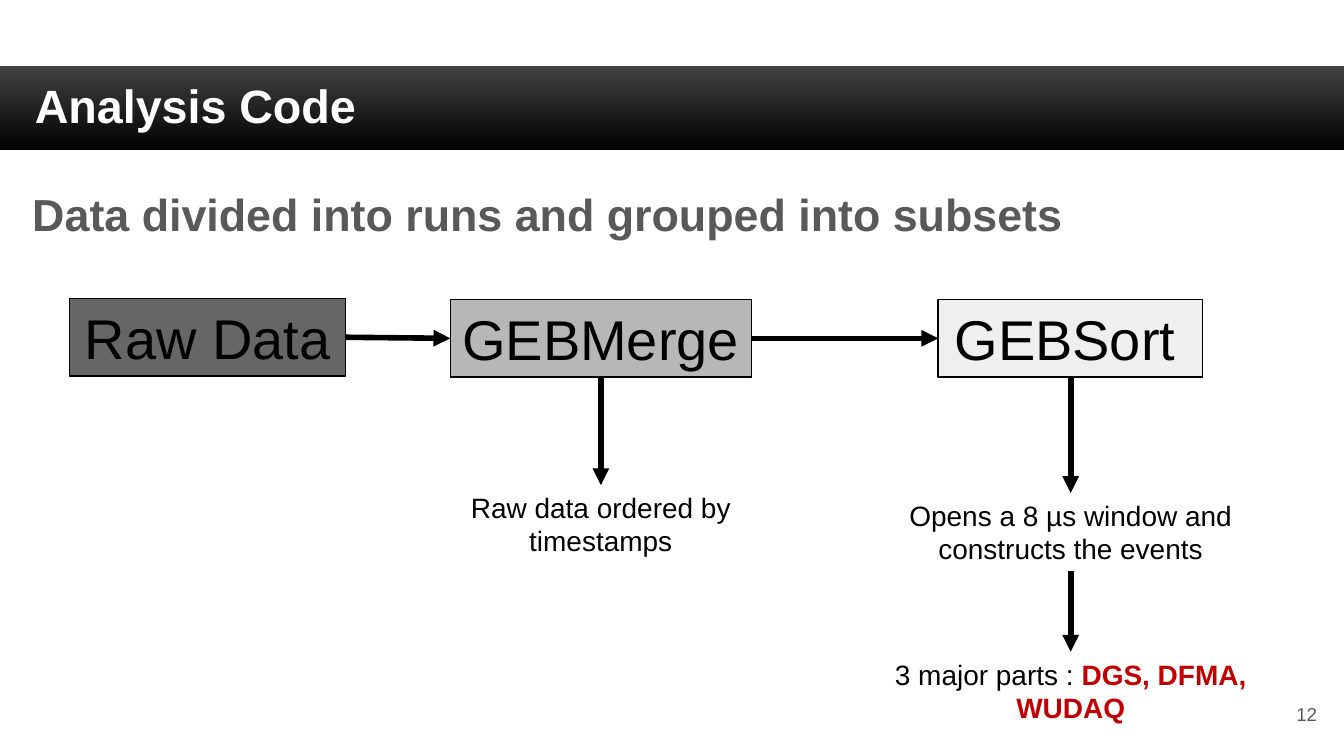
from lxml import etree
from pptx import Presentation
from pptx import util as u
from pptx.dml.color import RGBColor
from pptx.enum import shapes, text
from pptx.oxml import ns

HUE = {
    "ink": "000000", "white": "FFFFFF", "gray": "595959", "red": "C00000",
    "raw": "666666", "merge": "B7B7B7", "sort": "EFEFEF",
    "top": "424242", "base": "010101",
}
LEFT, MID, RIGHT = text.PP_ALIGN.LEFT, text.PP_ALIGN.CENTER, text.PP_ALIGN.RIGHT
ROW = 1.47  # height of stage boxes and captions


def tint(name):
    return RGBColor.from_string(HUE[name])


def write(shape, *runs, size=15, hue="ink", bold=False, align=MID,
          pad=(0.18, 0.1, 0.18, 0.1), mid=False, lead=None, after=None):
    """Fill a shape with one paragraph; a run is text or (text, hue, bold)."""
    frame = shape.text_frame
    frame.word_wrap = True
    frame.vertical_anchor = text.MSO_ANCHOR.MIDDLE if mid else text.MSO_ANCHOR.TOP
    (frame.margin_left, frame.margin_top,
     frame.margin_right, frame.margin_bottom) = map(u.Cm, pad)
    para = frame.paragraphs[0]
    para.alignment = align
    if lead:
        para.line_spacing = lead
    if after:
        para.space_after = u.Pt(after)
    for item in runs:
        words, shade, heavy = (item, hue, bold) if isinstance(item, str) else item
        run = para.add_run()
        run.text = words
        run.font.name = "Arial"
        run.font.size = u.Pt(size)
        run.font.bold = heavy
        run.font.color.rgb = tint(shade)


def block(slide, box):
    shape = slide.shapes.add_shape(shapes.MSO_SHAPE.RECTANGLE, *map(u.Cm, box))
    shape.shadow.inherit = False
    return shape


def label(slide, box, *runs, **look):
    write(slide.shapes.add_textbox(*map(u.Cm, box)), *runs, **look)


def arrow(slide, start, end):
    line = slide.shapes.add_connector(
        shapes.MSO_CONNECTOR.STRAIGHT, *map(u.Cm, start + end))
    line.line.color.rgb = tint("ink")
    line.line.width = u.Pt(3)
    tip = etree.SubElement(line.line._get_or_add_ln(), ns.qn("a:tailEnd"))
    tip.set("type", "triangle")
    etree.SubElement(line._element.spPr, ns.qn("a:effectLst"))


def banner(slide, box, title):
    bar = block(slide, box)
    bar.fill.gradient()
    bar.fill.gradient_angle = 270
    for stop, name, place in zip(bar.fill.gradient_stops, ("top", "base"), (0, 1)):
        stop.color.rgb = tint(name)
        stop.position = place
    bar.line.fill.background()
    write(bar, title, size=25, hue="white", bold=True, align=LEFT,
          pad=(0.66, 0.1, 0.18, 0.1), mid=True, lead=0.9)


def stage(slide, box, name, hue, **look):
    part = block(slide, box)
    part.fill.solid()
    part.fill.fore_color.rgb = tint(hue)
    part.line.color.rgb = tint("ink")
    part.line.width = u.Pt(0.75)
    write(part, name, size=30, **look)


def chain(slide, box):
    """Three stages in a row, joined by arrows."""
    x, y, wide, _ = box
    raw = (x, y, 5.21, ROW)
    merge = (x + 7.19, y + 0.02, 5.69, ROW)
    sort = (x + wide - 5, y + 0.02, 5, ROW)
    stage(slide, raw, "Raw Data", "raw")
    stage(slide, merge, "GEBMerge", "merge")
    stage(slide, sort, "GEBSort", "sort", pad=(0.18, 0.1, 0.38, 0.1))
    for one, two in ((raw, merge), (merge, sort)):
        arrow(slide, (one[0] + one[2], one[1] + ROW / 2),
              (two[0], two[1] + ROW / 2))


def notes(slide, box, *steps):
    """Captions below a stage; a step is (arrow length, runs)."""
    x, y, wide, _ = box
    axis = x + wide / 2
    for drop, runs in steps:
        arrow(slide, (axis, y), (axis, y + drop))
        label(slide, (x, y + drop, wide, ROW), *runs)
        y += drop + ROW


def build():
    deck = Presentation()
    deck.slide_width, deck.slide_height = u.Cm(25.4), u.Cm(14.29)
    slide = deck.slides.add_slide(deck.slide_layouts[6])

    # Title and heading
    banner(slide, (0, 1.24, 25.4, 1.6), "Analysis Code")
    label(slide, (0.36, 3.12, 20.75, 1.55),
          "Data divided into runs and grouped into subsets", size=24, hue="gray",
          bold=True, align=LEFT, pad=(0.25,) * 4, lead=1.15, after=12)

    # Process flow
    chain(slide, (1.32, 5.64, 21.41, ROW))
    notes(slide, (8.51, 7.13, 5.69, 3.5),
          (2.04, ["Raw data ordered by timestamps"]))
    notes(slide, (16.26, 7.13, 7.95, 6.66),
          (2.19, ["Opens a 8 µs window and constructs the events"]),
          (1.53, ["3 major parts : ", ("DGS, DFMA, WUDAQ", "red", True)]))

    # Page number
    label(slide, (23.55, 12.95, 1.52, 1.09), "12", size=10, hue="gray",
          align=RIGHT, mid=True)
    deck.save("out.pptx")


if __name__ == "__main__":
    build()
